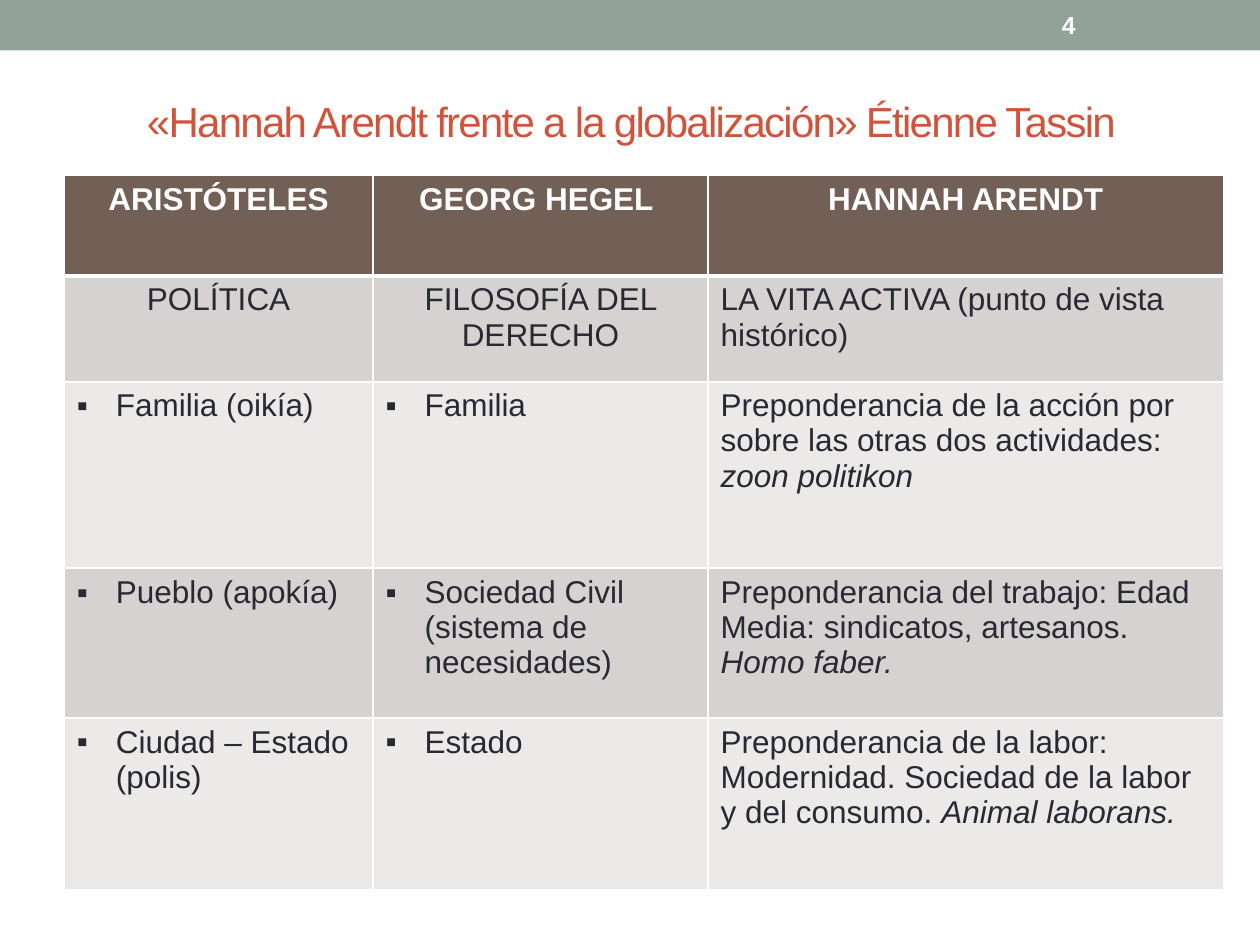
from dataclasses import dataclass

from lxml.etree import SubElement
from pptx import Presentation
from pptx.dml.color import RGBColor
from pptx.enum.shapes import MSO_SHAPE
from pptx.enum.text import MSO_ANCHOR, PP_ALIGN
from pptx.oxml.ns import qn
from pptx.util import Pt

PX = 9144  # EMU per px, 100 px to the inch


@dataclass(frozen=True)
class Theme:
    font: str = "Arial"
    bar: str = "93A299"
    title: str = "D2533C"
    head: str = "726056"
    bands: tuple = ("D5D2D1", "EBEAE9")
    ink: str = "292934"
    white: str = "FFFFFF"
    title_size: int = 24
    cell_size: int = 18
    page_size: int = 14
    rule: int = 1
    head_rule: int = 3


THEME = Theme()
COLS = (245, 266, 409)
ROWS = (80, 84, 148, 119, 136)
# A bar in a cell's text starts its italic part.
CELLS = (
    ("ARISTÓTELES", "GEORG HEGEL ", "HANNAH ARENDT"),
    ("POLÍTICA", "FILOSOFÍA DEL DERECHO",
     "LA VITA ACTIVA (punto de vista histórico)"),
    ("Familia (oikía)", "Familia",
     "Preponderancia de la acción por sobre las otras dos actividades: "
     "|zoon politikon"),
    ("Pueblo (apokía)", "Sociedad Civil (sistema de necesidades)",
     "Preponderancia del trabajo: Edad Media: sindicatos, artesanos."
     "| Homo faber."),
    ("Ciudad – Estado (polis)", "Estado",
     "Preponderancia de la labor: Modernidad. Sociedad de la labor y del "
     "consumo. |Animal laborans."),
)


def scale(box):
    return [n * PX for n in box]


def paint(fill, color):
    fill.solid()
    fill.fore_color.rgb = RGBColor.from_string(color)


def add_run(para, text, color, size, **extra):
    run = para.add_run()
    run.text = text
    form = {"name": THEME.font, "size": Pt(size), **extra}
    for key, value in form.items():
        setattr(run.font, key, value)
    run.font.color.rgb = RGBColor.from_string(color)
    return run


def add_label(slide, box):
    """Add a wrapped, vertically centred text box; return its paragraph."""
    frame = slide.shapes.add_textbox(*scale(box)).text_frame
    form = {"word_wrap": True, "vertical_anchor": MSO_ANCHOR.MIDDLE}
    for key, value in form.items():
        setattr(frame, key, value)
    return frame.paragraphs[0]


def add_bar(slide, box):
    """Add the top band with the page number near its right end."""
    left, top, width, height = box
    bar = slide.shapes.add_shape(MSO_SHAPE.RECTANGLE, *scale(box))
    bar.shadow.inherit = False
    paint(bar.fill, THEME.bar)
    bar.line.fill.background()
    para = add_label(slide, (left + width - 167, top + 2, 117, height - 4))
    add_run(para, "4", THEME.white, THEME.page_size, bold=True)


def add_title(slide, box):
    para = add_label(slide, box)
    para.alignment = PP_ALIGN.CENTER
    run = add_run(para, "«Hannah Arendt frente a la globalización» Étienne Tassin",
                  THEME.title, THEME.title_size)
    run.font._element.set("spc", "-100")


def add_bullet(para):
    props = para._p.get_or_add_pPr()
    for key, value in {"marL": 31 * PX, "indent": -31 * PX}.items():
        props.set(key, str(value))
    SubElement(props, qn("a:buFont"), typeface=THEME.font)
    SubElement(props, qn("a:buChar"), char="▪")


def add_rules(cell, row):
    """Draw the cell's borders, thicker between header and body."""
    props = cell._tc.get_or_add_tcPr()
    thick = {0: "B", 1: "T"}.get(row)
    for side in "LRTB":
        width = THEME.head_rule if side == thick else THEME.rule
        line = SubElement(props, qn(f"a:ln{side}"), w=str(Pt(width)))
        fill = SubElement(line, qn("a:solidFill"))
        SubElement(fill, qn("a:srgbClr"), val=THEME.white)


def fill_cell(cell, row, col, text):
    head = row == 0
    add_rules(cell, row)
    paint(cell.fill, THEME.head if head else THEME.bands[(row - 1) % 2])
    para = cell.text_frame.paragraphs[0]
    if head or (row == 1 and col < 2):
        para.alignment = PP_ALIGN.CENTER
    elif col < 2:
        add_bullet(para)
    for part, words in enumerate(text.split("|")):
        add_run(para, words, THEME.white if head else THEME.ink,
                THEME.cell_size, bold=head, italic=part == 1)


def add_grid(slide, box):
    """Add the table comparing the three thinkers."""
    table = slide.shapes.add_table(len(ROWS), len(COLS), *scale(box)).table
    table.horz_banding = False
    for col, width in zip(table.columns, COLS):
        col.width = width * PX
    for row, height in zip(table.rows, ROWS):
        row.height = height * PX
    for row, texts in enumerate(CELLS):
        for col, text in enumerate(texts):
            fill_cell(table.cell(row, col), row, col, text)


def main():
    deck = Presentation()
    deck.slide_width, deck.slide_height = scale((1000, 750))
    slide = deck.slides.add_slide(deck.slide_layouts[6])
    add_bar(slide, (0, 0, 1000, 40))
    add_title(slide, (51, 52, 900, 88))
    add_grid(slide, (51, 139, sum(COLS), sum(ROWS)))
    deck.save("out.pptx")


if __name__ == "__main__":
    main()
